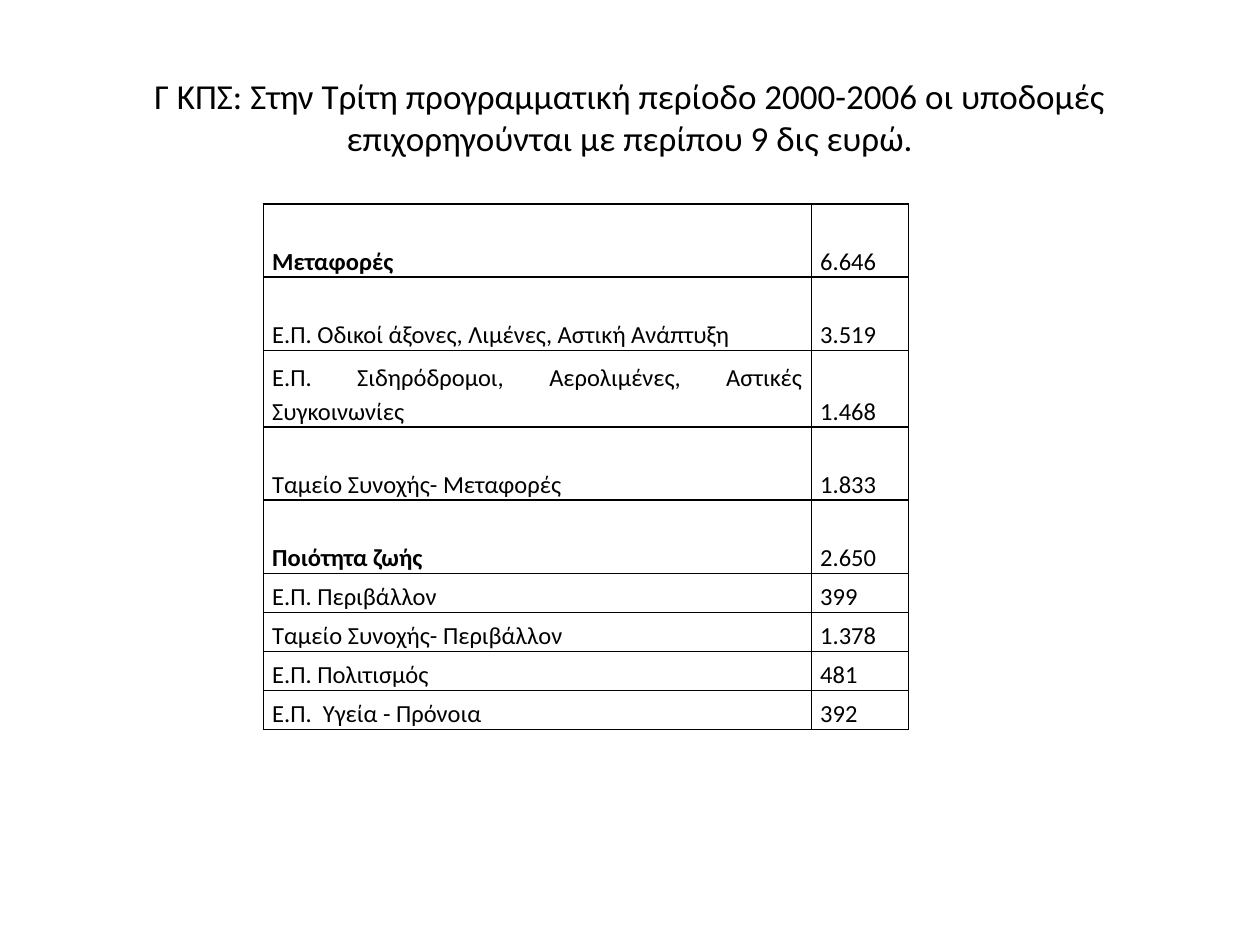
from dataclasses import dataclass

from lxml.etree import SubElement
from pptx import Presentation
from pptx.dml.color import RGBColor
from pptx.enum.text import MSO_ANCHOR, PP_ALIGN
from pptx.oxml.ns import qn
from pptx.util import Inches, Pt


@dataclass(frozen=True)
class Theme:
    font: str = "Calibri"
    ink: str = "000000"
    title_size: int = 20
    table_size: int = 14
    border_width: int = 1


TITLE = ("Γ ΚΠΣ: Στην Τρίτη προγραμματική περίοδο 2000-2006 οι υποδομές "
         "επιχορηγούνται με περίπου 9 δις ευρώ.")

TALL, WRAPPED, SHORT = 0.58, 0.61, 0.31
COLUMN_WIDTHS = (4.35, 0.77)

# label, amount, row height, whether the label heads a group
FUNDING = [
    ("Μεταφορές", "6.646", TALL, True),
    ("Ε.Π. Οδικοί άξονες, Λιμένες, Αστική Ανάπτυξη", "3.519", TALL, False),
    ("Ε.Π. Σιδηρόδρομοι, Αερολιμένες, Αστικές Συγκοινωνίες", "1.468", WRAPPED, False),
    ("Ταμείο Συνοχής- Μεταφορές", "1.833", TALL, False),
    ("Ποιότητα ζωής", "2.650", TALL, True),
    ("Ε.Π. Περιβάλλον", "399", SHORT, False),
    ("Ταμείο Συνοχής- Περιβάλλον", "1.378", SHORT, False),
    ("Ε.Π. Πολιτισμός", "481", SHORT, False),
    ("Ε.Π.  Υγεία - Πρόνοια", "392", SHORT, False),
]


class SlideBuilder:
    def __init__(self, page, theme):
        self.page = page
        self.theme = theme

    def style(self, paragraph, size, alignment, bold=False):
        paragraph.alignment = alignment
        font = paragraph.font
        font.name = self.theme.font
        font.size = Pt(size)
        font.bold = bold
        font.color.rgb = RGBColor.from_string(self.theme.ink)

    def title(self, text, left, top, width, height):
        box = self.page.shapes.add_textbox(
            Inches(left), Inches(top), Inches(width), Inches(height))
        frame = box.text_frame
        frame.word_wrap = True
        frame.vertical_anchor = MSO_ANCHOR.MIDDLE
        frame.text = text
        self.style(frame.paragraphs[0], self.theme.title_size, PP_ALIGN.CENTER)

    def table(self, rows, column_widths, left, top):
        height = sum(row[2] for row in rows)
        table = self.page.shapes.add_table(
            len(rows), len(column_widths), Inches(left), Inches(top),
            Inches(sum(column_widths)), Inches(height)).table
        table.first_row = False
        table.horz_banding = False
        for column, width in zip(table.columns, column_widths):
            column.width = Inches(width)
        for row, (label, amount, row_height, heads_group) in zip(table.rows, rows):
            row.height = Inches(row_height)
            self.cell(row.cells[0], label, heads_group)
            self.cell(row.cells[1], amount)

    def cell(self, cell, text, bold=False):
        cell.text = text
        cell.vertical_anchor = MSO_ANCHOR.BOTTOM
        cell.margin_left = cell.margin_right = Inches(0.07)
        cell.margin_top = cell.margin_bottom = 0
        paragraph = cell.text_frame.paragraphs[0]
        paragraph.line_spacing = 1.15
        self.style(paragraph, self.theme.table_size, PP_ALIGN.JUSTIFY, bold)
        self.borders(cell)
        cell.fill.background()

    def borders(self, cell):
        """Rule all four sides; must run before the fill is set, as the schema orders them."""
        properties = cell._tc.get_or_add_tcPr()
        for side in ("a:lnL", "a:lnR", "a:lnT", "a:lnB"):
            line = SubElement(properties, qn(side), w=str(Pt(self.theme.border_width)))
            fill = SubElement(line, qn("a:solidFill"))
            SubElement(fill, qn("a:srgbClr"), val=self.theme.ink)


def main():
    deck = Presentation()
    deck.slide_width, deck.slide_height = Inches(10), Inches(7.5)
    page = deck.slides.add_slide(deck.slide_layouts[6])
    builder = SlideBuilder(page, Theme())
    builder.title(TITLE, 0.5, 0.3, 9, 1.25)
    builder.table(FUNDING, COLUMN_WIDTHS, 2.09, 1.62)
    deck.save("out.pptx")


if __name__ == "__main__":
    main()
